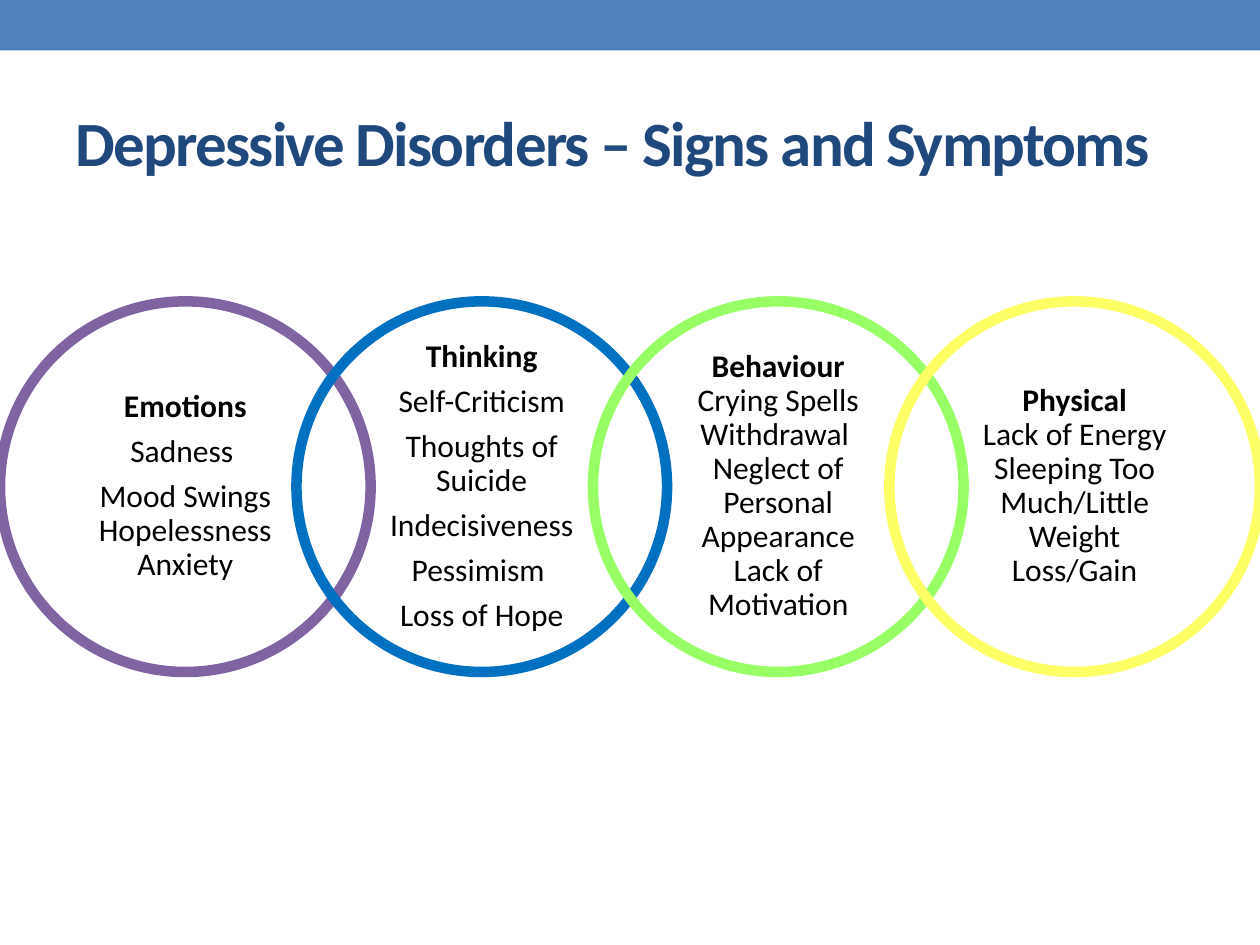
from dataclasses import dataclass

from pptx import Presentation
from pptx.dml.color import RGBColor as Color
from pptx.enum.shapes import MSO_SHAPE as Preset
from pptx.enum.text import MSO_ANCHOR as Anchor, PP_ALIGN as Align
from pptx.util import Pt


@dataclass(frozen=True)
class Theme:
    font: str = "Calibri"
    banner: str = "4F81BD"
    title: str = "1F497D"
    body: str = "000000"
    paper: str = "FFFFFF"
    title_size: float = 36
    body_size: float = 18
    ring_width: float = 6


PAGE_WIDTH, PAGE_HEIGHT = 720, 540
RING_TOP = 172.2
STEP_RATIO = 0.8  # each ring overlaps the one before by a fifth

# Ring colour, then paragraphs; the first line of each ring is its heading
RINGS = [
    ("8064A2", ["Emotions", "Sadness ", "Mood Swings Hopelessness Anxiety"]),
    ("0070C0", ["Thinking", "Self-Criticism", "Thoughts of Suicide",
                "Indecisiveness", "Pessimism ", "Loss of Hope"]),
    ("99FF66", ["Behaviour\vCrying Spells\vWithdrawal \vNeglect of Personal"
                "\vAppearance\vLack of Motivation"]),
    ("FFFF66", ["Physical\vLack of Energy\vSleeping Too Much/Little"
                "\vWeight Loss/Gain"]),
]


class SlideBuilder:
    def __init__(self, page, theme):
        self.page = page
        self.theme = theme

    def style(self, span, size, color, bold):
        span.font.name = self.theme.font
        span.font.size = Pt(size)
        span.font.bold = bold
        span.font.color.rgb = Color.from_string(color)

    def banner(self, width, height):
        bar = self.page.shapes.add_shape(Preset.RECTANGLE, 0, 0, Pt(width), Pt(height))
        bar.shadow.inherit = False
        bar.fill.solid()
        bar.fill.fore_color.rgb = Color.from_string(self.theme.banner)
        bar.line.fill.background()

    def title(self, text, left, top, width, height):
        box = self.page.shapes.add_textbox(Pt(left), Pt(top), Pt(width), Pt(height))
        frame = box.text_frame
        frame.word_wrap = True
        frame.vertical_anchor = Anchor.MIDDLE
        frame.text = text
        span = frame.paragraphs[0].runs[0]
        self.style(span, self.theme.title_size, self.theme.title, True)
        span._r.get_or_add_rPr().set("spc", "-100")

    def ring(self, color, lines, left, top, size, filled):
        ring = self.page.shapes.add_shape(Preset.OVAL, Pt(left), Pt(top), Pt(size), Pt(size))
        ring.shadow.inherit = False
        if filled:
            ring.fill.solid()
            ring.fill.fore_color.rgb = Color.from_string(self.theme.paper)
        else:
            ring.fill.background()
        ring.line.color.rgb = Color.from_string(color)
        ring.line.width = Pt(self.theme.ring_width)

        # Margins add to the oval's own text inset
        frame = ring.text_frame
        frame.word_wrap = True
        frame.vertical_anchor = Anchor.MIDDLE
        frame.margin_left = frame.margin_right = Pt(11.5)
        frame.margin_top = frame.margin_bottom = Pt(2)
        frame.text = "\n".join(lines)
        for para in frame.paragraphs:
            para.alignment = Align.CENTER
            para.line_spacing = 0.9
            para.space_after = Pt(6.3)
        spans = [span for para in frame.paragraphs for span in para.runs]
        for index, span in enumerate(spans):
            self.style(span, self.theme.body_size, self.theme.body, index == 0)


def main():
    deck = Presentation()
    deck.slide_width, deck.slide_height = Pt(PAGE_WIDTH), Pt(PAGE_HEIGHT)
    page = deck.slides.add_slide(deck.slide_layouts[6])
    builder = SlideBuilder(page, Theme())

    # Header
    builder.banner(PAGE_WIDTH, 28.8)
    builder.title("Depressive Disorders – Signs and Symptoms", 36, 42, 648, 78)

    # Chain of rings across the full page width
    size = PAGE_WIDTH / (1 + STEP_RATIO * (len(RINGS) - 1))
    for index, (color, lines) in enumerate(RINGS):
        left = index * STEP_RATIO * size
        builder.ring(color, lines, left, RING_TOP, size, filled=index == 0)

    deck.save("out.pptx")


if __name__ == "__main__":
    main()
